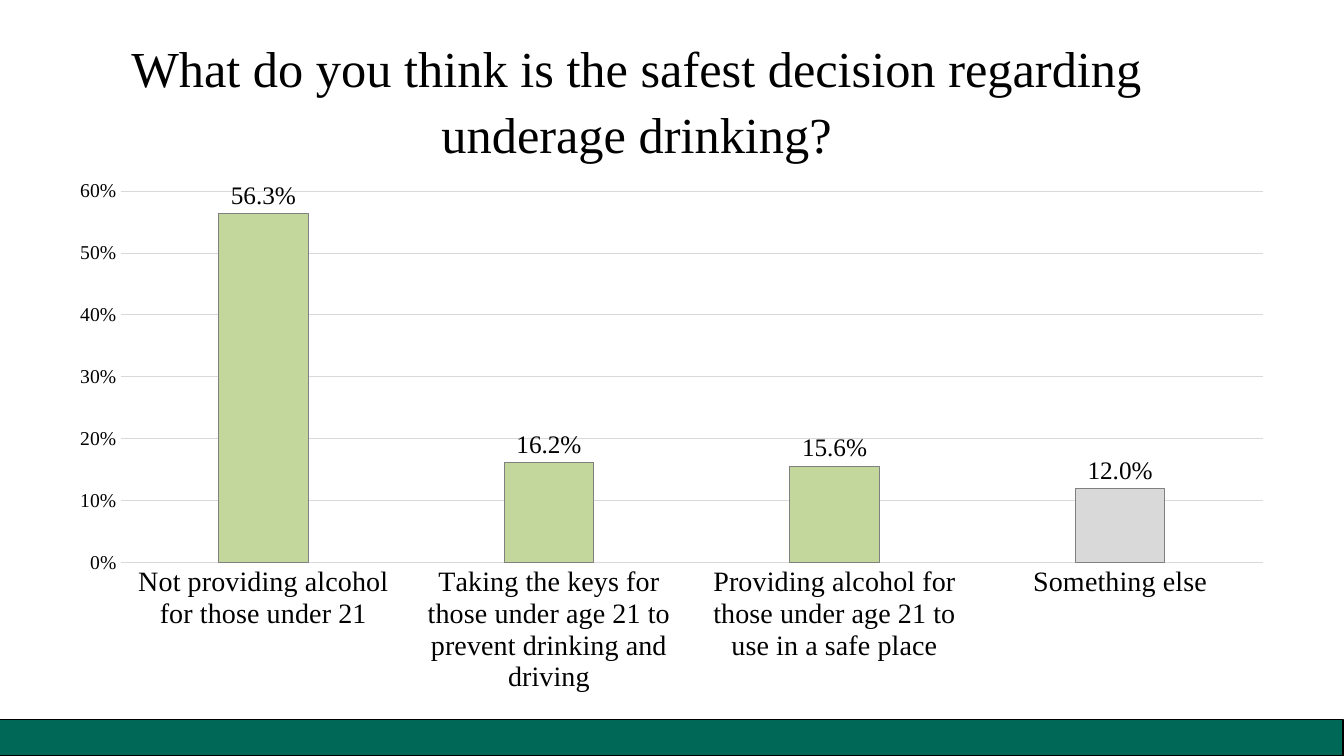
import pptx
import pptx.chart.data
import pptx.dml.color
import pptx.enum.chart
import pptx.enum.shapes
import pptx.enum.text
import pptx.util
from pptx.util import Inches

RGBColor = pptx.dml.color.RGBColor
BLACK = RGBColor(0x00, 0x00, 0x00)
FOOTER_GREEN = RGBColor(0x00, 0x68, 0x57)
BAR_GREEN = RGBColor(0xC3, 0xD6, 0x9B)
LIGHT_GRAY = RGBColor(0xD9, 0xD9, 0xD9)
OUTLINE_GRAY = RGBColor(0x80, 0x80, 0x80)
FONT_NAME = "Times New Roman"

ANSWERS = {
    "Not providing alcohol for those under 21": 0.563,
    "Taking the keys for those under age 21 to prevent drinking and driving": 0.162,
    "Providing alcohol for those under age 21 to use in a safe place": 0.156,
    "Something else": 0.12,
}


def style_font(font, size, color=BLACK):
    """Set the typeface, size and colour of a font."""
    font.name = FONT_NAME
    font.size = pptx.util.Pt(size)
    font.bold = False
    font.color.rgb = color


def style_line(line, color, width):
    """Set the colour and width of a line."""
    line.color.rgb = color
    line.width = pptx.util.Pt(width)


def style_fill(fill, color):
    """Set a solid fill."""
    fill.solid()
    fill.fore_color.rgb = color


def add_text(slide, text, left, top, width, height, *, size, line_spacing=1.0,
             alignment=pptx.enum.text.PP_ALIGN.CENTER):
    """Add a wrapped, vertically centred text box."""
    shape = slide.shapes.add_textbox(Inches(left), Inches(top), Inches(width), Inches(height))
    frame = shape.text_frame
    frame.word_wrap = True
    frame.vertical_anchor = pptx.enum.text.MSO_ANCHOR.MIDDLE
    paragraph = frame.paragraphs[0]
    paragraph.alignment = alignment
    paragraph.line_spacing = line_spacing
    run = paragraph.add_run()
    run.text = text
    style_font(run.font, size)


def add_footer_bar(slide):
    """Add the green bar along the bottom edge."""
    shape = slide.shapes.add_shape(
        pptx.enum.shapes.MSO_SHAPE.RECTANGLE,
        Inches(-0.01), Inches(7.14), Inches(13.33), Inches(0.36))
    shape.shadow.inherit = False
    style_fill(shape.fill, FOOTER_GREEN)
    style_line(shape.line, BLACK, 1)


def style_axes(chart):
    """Format the category and value axes."""
    no_tick = pptx.enum.chart.XL_TICK_MARK.NONE
    for axis, size in ((chart.category_axis, 20), (chart.value_axis, 14)):
        axis.major_tick_mark = no_tick
        axis.minor_tick_mark = no_tick
        style_font(axis.tick_labels.font, size)
    style_line(chart.category_axis.format.line, LIGHT_GRAY, 0.75)
    value_axis = chart.value_axis
    value_axis.minimum_scale = 0
    value_axis.maximum_scale = 0.6
    value_axis.major_unit = 0.1
    value_axis.tick_labels.number_format = "0%"
    value_axis.tick_labels.number_format_is_linked = False
    value_axis.format.line.fill.background()
    style_line(value_axis.major_gridlines.format.line, LIGHT_GRAY, 0.75)


def style_bars(plot):
    """Format the bars and their value labels."""
    plot.gap_width = 219
    plot.overlap = -27
    plot.vary_by_categories = False
    series = plot.series[0]
    series.invert_if_negative = False
    last_bar = series.points[len(ANSWERS) - 1]
    for bar_format, color in ((series.format, BAR_GREEN), (last_bar.format, LIGHT_GRAY)):
        style_fill(bar_format.fill, color)
        style_line(bar_format.line, OUTLINE_GRAY, 0.75)
    labels = series.data_labels
    labels.show_value = True
    labels.number_format = "0.0%"
    labels.number_format_is_linked = False
    labels.position = pptx.enum.chart.XL_LABEL_POSITION.OUTSIDE_END
    style_font(labels.font, 18)


def add_answer_chart(slide):
    """Add the column chart of survey answers."""
    data = pptx.chart.data.CategoryChartData(number_format="0.0%")
    data.categories = list(ANSWERS)
    data.add_series("Series 1", list(ANSWERS.values()))
    chart = slide.shapes.add_chart(
        pptx.enum.chart.XL_CHART_TYPE.COLUMN_CLUSTERED,
        Inches(0.55), Inches(1.68), Inches(12.22), Inches(5.3), data).chart
    chart.has_title = False
    chart.has_legend = False
    style_font(chart.font, 20)
    style_axes(chart)
    style_bars(chart.plots[0])


def main():
    """Build and save the survey slide."""
    presentation = pptx.Presentation()
    presentation.slide_width = Inches(13.33)
    presentation.slide_height = Inches(7.5)
    slide = presentation.slides.add_slide(presentation.slide_layouts[6])
    add_footer_bar(slide)
    add_text(slide, "What do you think is the safest decision regarding underage drinking?",
             0.46, 0.25, 11.71, 1.43, size=36, line_spacing=1.1)
    add_answer_chart(slide)
    presentation.save("out.pptx")


if __name__ == "__main__":
    main()
